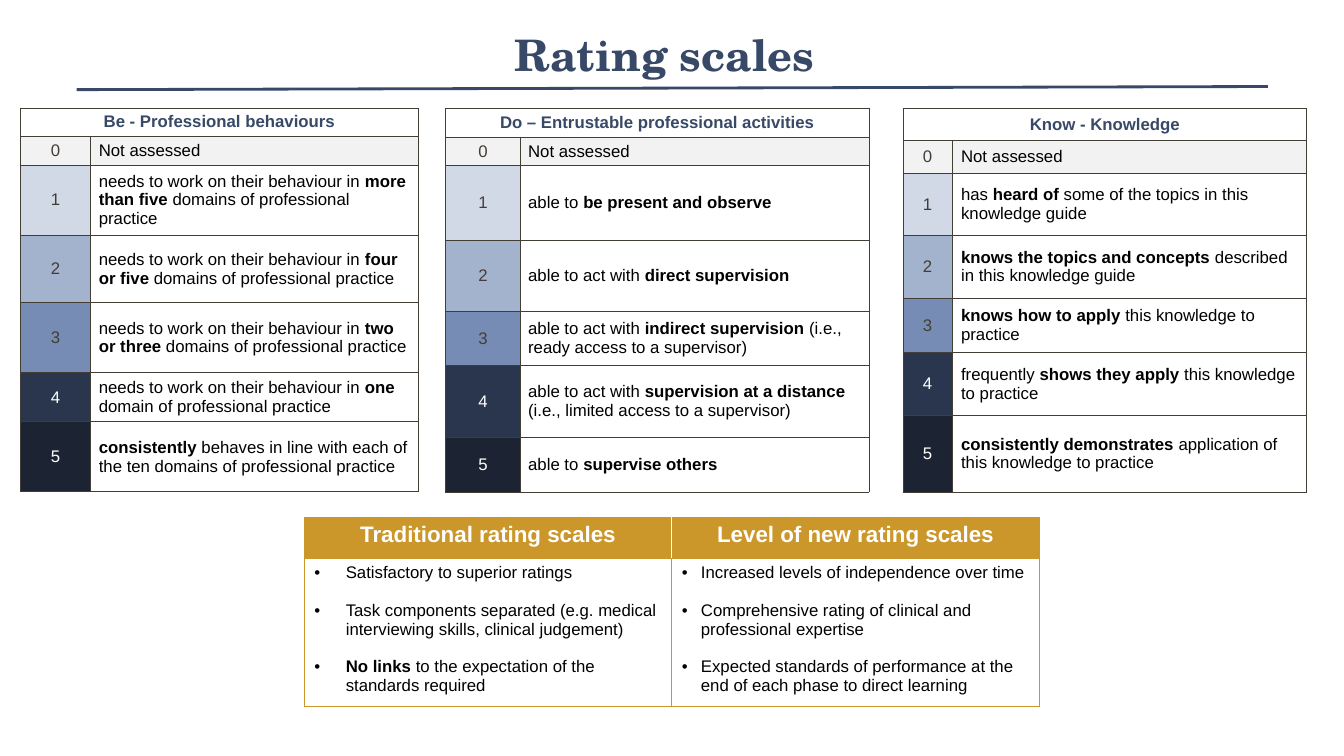
from dataclasses import dataclass

from lxml.etree import SubElement
from pptx import Presentation
from pptx.dml.color import RGBColor
from pptx.enum.shapes import MSO_CONNECTOR
from pptx.enum.text import MSO_ANCHOR as Anchor, PP_ALIGN as Align
from pptx.oxml.ns import qn
from pptx.slide import Slide
from pptx.util import Cm, Pt

LEVEL_STYLES = [  # fill and text colour of levels 0 to 5
    ("F2F2F2", "433E35"), ("D1D8E6", "433E35"), ("A3B2CD", "433E35"),
    ("768CB4", "433E35"), ("2A364D", "FFFFFF"), ("1C2433", "FFFFFF"),
]

# Text between asterisks is bold.
SCALES = [
    dict(
        heading="Be - Professional behaviours", left=0.51, columns=(1.78, 8.26), inset=0.2,
        rows=(0.71, 0.73, 1.76, 1.71, 1.76, 1.24, 1.76),
        levels=[
            "Not assessed",
            "needs to work on their behaviour in *more than five* domains of professional practice",
            "needs to work on their behaviour in *four or five* domains of professional practice",
            "needs to work on their behaviour in *two or three* domains of professional practice",
            "needs to work on their behaviour in *one* domain of professional practice",
            "*consistently* behaves in line with each of the ten domains of professional practice",
        ]),
    dict(
        heading="Do – Entrustable professional activities", left=11.23, columns=(1.88, 8.79), inset=0.2,
        rows=(0.73, 0.72, 1.88, 1.79, 1.37, 1.81, 1.38),
        levels=[
            "Not assessed",
            "able to *be present and observe*",
            "able to act with *direct supervision*",
            "able to act with *indirect supervision* (i.e., ready access to a supervisor)",
            "able to act with *supervision at a distance* (i.e., limited access to a supervisor)",
            "able to *supervise others*",
        ]),
    dict(
        heading="Know - Knowledge", left=22.76, columns=(1.23, 8.94), inset=0.23,
        rows=(0.82, 0.82, 1.57, 1.58, 1.37, 1.58, 1.94),
        levels=[
            "Not assessed",
            "has *heard of* some of the topics in this knowledge guide",
            "*knows the topics and concepts* described in this knowledge guide",
            "*knows how to apply* this knowledge to practice",
            "frequently *shows they apply* this knowledge to practice",
            "*consistently demonstrates* application of this knowledge to practice",
        ]),
]

COMPARISON = [  # heading, bullet indent, points
    ("Traditional rating scales", 0.79, [
        "Satisfactory to superior ratings",
        "Task components separated (e.g. medical interviewing skills, clinical judgement)",
        "*No links* to the expectation of the standards required",
    ]),
    ("Level of new rating scales", 0.48, [
        "Increased levels of independence over time",
        "Comprehensive rating of clinical and professional expertise",
        "Expected standards of performance at the end of each phase to direct learning",
    ]),
]


def color(value):
    return RGBColor.from_string(value)


@dataclass
class RatingSlide:
    slide: Slide
    font: str = "Arial"
    title_font: str = "TeX Gyre Schola"
    navy: str = "384967"
    gold: str = "CB972B"
    grid: str = "433E35"
    white: str = "FFFFFF"
    black: str = "000000"

    def add_runs(self, paragraph, text, size=12, text_color=None, font=None, align=Align.LEFT):
        """Add one run per stretch of plain or *bold* text."""
        paragraph.alignment = align
        for index, part in enumerate(text.split("*")):
            if part:
                run = paragraph.add_run()
                run.text = part
                run.font.name = font or self.font
                run.font.size = Pt(size)
                run.font.bold = index % 2 == 1
                run.font.color.rgb = color(text_color or self.black)

    def title(self, text):
        box = self.slide.shapes.add_textbox(Cm(5.31), Cm(0.18), Cm(22.86), Cm(2.39))
        frame = box.text_frame
        frame.word_wrap = True
        frame.vertical_anchor = Anchor.MIDDLE
        self.add_runs(frame.paragraphs[0], f"*{text}*", 31, self.navy, self.title_font, Align.CENTER)

    def rule(self, x1, y1, x2, y2):
        line = self.slide.shapes.add_connector(
            MSO_CONNECTOR.STRAIGHT, Cm(x1), Cm(y1), Cm(x2), Cm(y2))
        line.line.color.rgb = color(self.navy)
        line.line.width = Pt(2)
        SubElement(line._element.spPr, qn("a:effectLst"))

    def table(self, left, top, columns, rows):
        frame = self.slide.shapes.add_table(
            len(rows), len(columns), Cm(left), Cm(top), Cm(sum(columns)), Cm(sum(rows)))
        table = frame.table
        table.first_row = table.horz_banding = False
        for column, width in zip(table.columns, columns):
            column.width = Cm(width)
        for row, height in zip(table.rows, rows):
            row.height = Cm(height)
        return table

    def style_cell(self, cell, fill, border, width, **side_colors):
        """Set borders and fill; side_colors (L, R, T, B) override the border colour."""
        properties = cell._tc.get_or_add_tcPr()
        for side in "LRTB":
            line = SubElement(properties, qn(f"a:ln{side}"), w=str(Pt(width)))
            solid = SubElement(line, qn("a:solidFill"))
            SubElement(solid, qn("a:srgbClr"), val=side_colors.get(side, border))
        cell.fill.solid()
        cell.fill.fore_color.rgb = color(fill)

    def scale(self, heading, left, columns, inset, rows, levels):
        table = self.table(left, 2.72, columns, rows)
        fills = [(self.white, self.white)]
        fills += [(fill, fill if level == 0 else self.white)
                  for level, (fill, _) in enumerate(LEVEL_STYLES)]
        for row, row_fills in enumerate(fills):
            for column, fill in enumerate(row_fills):
                cell = table.cell(row, column)
                cell.vertical_anchor = Anchor.MIDDLE
                cell.margin_left = cell.margin_right = Cm(inset)
                cell.margin_top = cell.margin_bottom = Cm(0.1)
                self.style_cell(cell, fill, self.grid, 0.61)
        header = table.cell(0, 0)
        header.merge(table.cell(0, 1))
        self.add_runs(header.text_frame.paragraphs[0], f"*{heading}*",
                      text_color=self.navy, align=Align.CENTER)
        for level, description in enumerate(levels):
            number, text = (table.cell(level + 1, column) for column in (0, 1))
            self.add_runs(number.text_frame.paragraphs[0], str(level),
                          text_color=LEVEL_STYLES[level][1], align=Align.CENTER)
            self.add_runs(text.text_frame.paragraphs[0], description)

    def bullets(self, frame, points, indent):
        for index, point in enumerate(points):
            paragraph = frame.add_paragraph() if index else frame.paragraphs[0]
            properties = paragraph._p.get_or_add_pPr()
            properties.set("marL", str(Cm(indent)))
            properties.set("indent", str(-Cm(indent)))
            SubElement(properties, qn("a:buFont"), typeface=self.font)
            SubElement(properties, qn("a:buChar"), char="•")
            if index:
                paragraph.space_before = Pt(13.4)
            self.add_runs(paragraph, point)

    def comparison(self, sides):
        table = self.table(7.67, 13.03, (9.26, 9.26), (1.04, 3.58))
        for column, (heading, indent, points) in enumerate(sides):
            header, body = (table.cell(row, column) for row in (0, 1))
            inner_side = "L" if column else "R"
            self.style_cell(header, self.gold, self.gold, 1, **{inner_side: self.white})
            self.style_cell(body, self.white, self.gold, 1)
            self.add_runs(header.text_frame.paragraphs[0], f"*{heading}*", 16,
                          self.white, align=Align.CENTER)
            self.bullets(body.text_frame, points, indent)


def main():
    presentation = Presentation()
    presentation.slide_width, presentation.slide_height = Cm(33.87), Cm(19.05)
    page = RatingSlide(presentation.slides.add_slide(presentation.slide_layouts[6]))
    page.title("Rating scales")
    page.comparison(COMPARISON)
    page.rule(1.93, 2.26, 31.95, 2.18)
    for scale in SCALES:
        page.scale(**scale)
    presentation.save("out.pptx")


if __name__ == "__main__":
    main()
